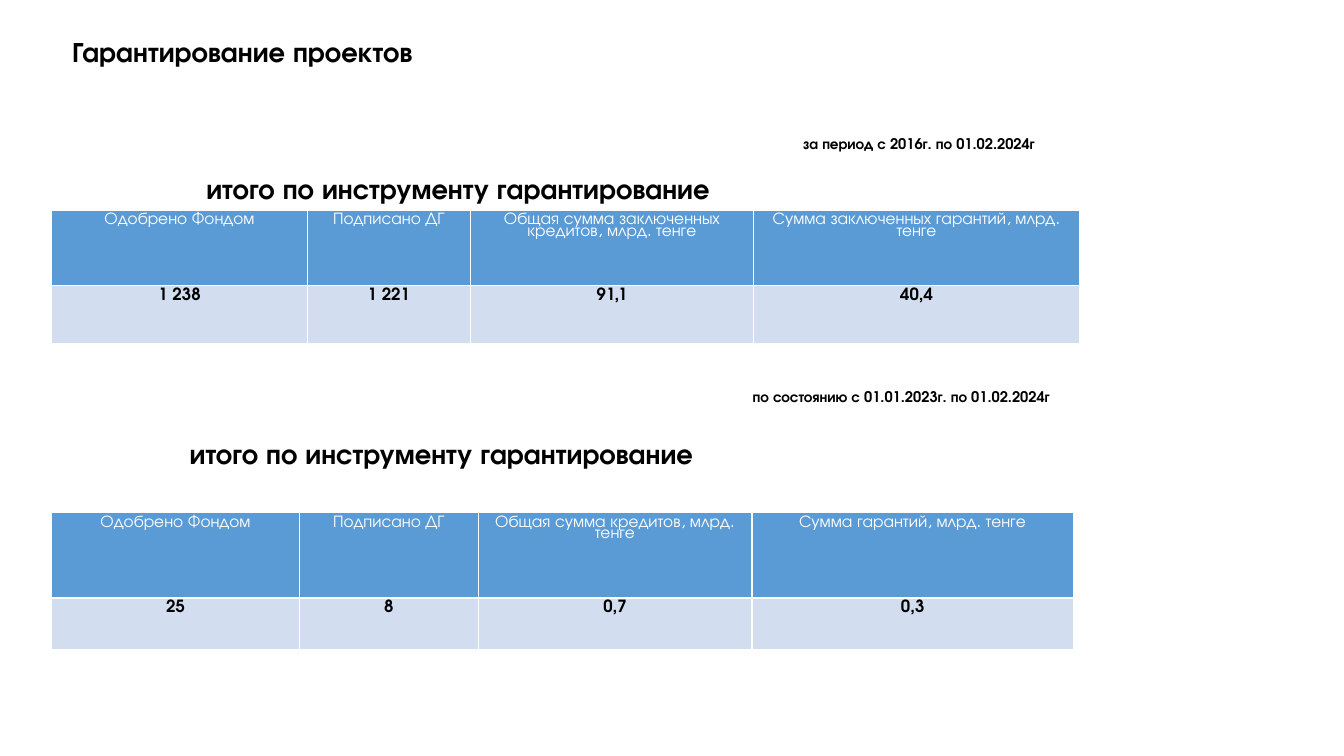
from dataclasses import dataclass

from lxml.etree import SubElement
from pptx import Presentation
from pptx.dml.color import RGBColor
from pptx.enum.text import MSO_AUTO_SIZE as AutoSize, PP_ALIGN as Align
from pptx.oxml.ns import qn
from pptx.util import Cm, Pt


@dataclass(frozen=True)
class Theme:
    font: str = "TeX Gyre Adventor"
    ink: str = "000000"
    white: str = "FFFFFF"
    header: str = "5B9BD5"
    body: str = "D2DEEF"
    heading_size: float = 20
    period_size: float = 10.5
    cell_size: float = 12
    cell_spacing: float = 0.75
    border: float = 1


def write(tf, text, *, font, size, color, bold=False, align=Align.LEFT, spacing=None):
    p = tf.paragraphs[0]
    p.alignment = align
    p.line_spacing = spacing
    r = p.add_run()
    r.text = text
    r.font.name = font
    r.font.size = Pt(size)
    r.font.bold = bold
    r.font.color.rgb = RGBColor.from_string(color)


class SlideBuilder:
    def __init__(self, slide, theme):
        self.s = slide
        self.theme = theme

    def text(self, text, left, top, width, height, size, wrap=True):
        sp = self.s.shapes.add_textbox(Cm(left), Cm(top), Cm(width), Cm(height))
        tf = sp.text_frame
        tf.word_wrap = wrap
        tf.auto_size = AutoSize.SHAPE_TO_FIT_TEXT
        write(tf, text, font=self.theme.font, size=size, color=self.theme.ink, bold=True)

    def heading(self, text, left, top, width, wrap=True):
        self.text(text, left, top, width, 1.12, self.theme.heading_size, wrap)

    def period(self, text, left, top, width):
        self.text(text, left, top, width, 0.71, self.theme.period_size)

    def borders(self, cell):
        tc_pr = cell._tc.get_or_add_tcPr()
        for side in ("a:lnL", "a:lnR", "a:lnT", "a:lnB"):
            ln = SubElement(tc_pr, qn(side), w=str(Pt(self.theme.border)))
            fill = SubElement(ln, qn("a:solidFill"))
            SubElement(fill, qn("a:srgbClr"), val=self.theme.white)

    def cell(self, cell, text, is_header):
        t = self.theme
        self.borders(cell)
        cell.fill.solid()
        cell.fill.fore_color.rgb = RGBColor.from_string(t.header if is_header else t.body)
        write(cell.text_frame, text, font=t.font, size=t.cell_size,
              color=t.white if is_header else t.ink, bold=not is_header,
              align=Align.CENTER, spacing=t.cell_spacing)

    def table(self, rows, left, top, widths, heights):
        table = self.s.shapes.add_table(
            len(rows), len(widths), Cm(left), Cm(top),
            Cm(sum(widths)), Cm(sum(heights))).table
        for column, width in zip(table.columns, widths):
            column.width = Cm(width)
        for i, (row, height) in enumerate(zip(rows, heights)):
            table.rows[i].height = Cm(height)
            for j, text in enumerate(row):
                self.cell(table.cell(i, j), text, is_header=i == 0)


def main():
    prs = Presentation()
    prs.slide_width, prs.slide_height = Cm(33.87), Cm(19.05)
    s = SlideBuilder(prs.slides.add_slide(prs.slide_layouts[6]), Theme())
    total = "итого по инструменту гарантирование"
    table_left = 1.3

    s.heading("Гарантирование проектов", 1.57, 0.74, 12.17)

    s.period("за период с 2016г. по 01.02.2024г", 19.99, 3.28, 8.1)
    s.heading(total, 4.95, 4.19, 14.83, wrap=False)
    s.table([
        ["Одобрено Фондом", "Подписано ДГ",
         "Общая сумма заключенных кредитов, млрд. тенге",
         "Сумма заключенных гарантий, млрд. тенге"],
        ["1 238", "1 221", "91,1", "40,4"],
    ], table_left, 5.3, [6.45, 4.1, 7.15, 8.2], [1.9, 1.47])

    s.period("по состоянию с 01.01.2023г. по 01.02.2024г", 18.72, 9.65, 8.61)
    s.heading(total, 4.53, 10.87, 17.11)
    s.table([
        ["Одобрено Фондом", "Подписано ДГ",
         "Общая сумма кредитов, млрд. тенге",
         "Сумма гарантий, млрд. тенге"],
        ["25", "8", "0,7", "0,3"],
    ], table_left, 12.92, [6.25, 4.5, 6.9, 8.1], [2.15, 1.3])

    prs.save("out.pptx")


if __name__ == "__main__":
    main()
